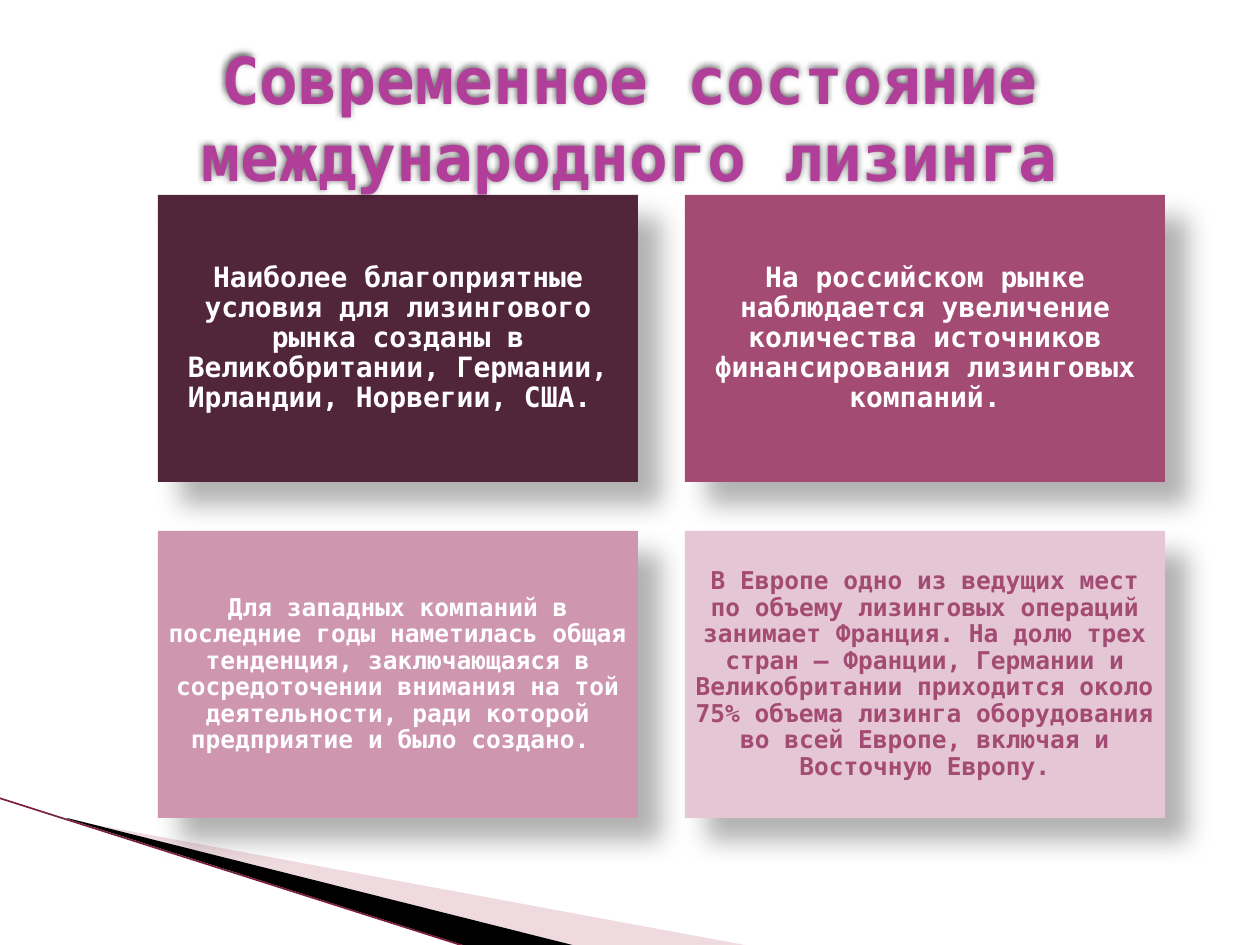
import pptx
import pptx.util
import pptx.dml.color
import pptx.enum.shapes
import pptx.enum.text
import pptx.oxml
import pptx.oxml.ns

SCALE = 914400 / 126
THEME = {
    "font": "DejaVu Sans Mono",
    "title": "B13F9A", "light": "FFFFFF", "accent": "A34B73",
    "cards": ["51253A", "A34B73", "CF96B0", "E5C6D5"],
    "pale": "D8A3AF", "black": "000000", "line": "7A1F3F",
    "title_size": 36.9, "large": 16, "small": 14,
}


def add_text(sp, text, size, color, inset):
    tf = sp.text_frame
    tf.word_wrap = True
    tf.vertical_anchor = pptx.enum.text.MSO_ANCHOR.MIDDLE
    tf.margin_left = tf.margin_right = tf.margin_top = tf.margin_bottom = int(inset * SCALE)
    p = tf.paragraphs[0]
    p.alignment = pptx.enum.text.PP_ALIGN.CENTER
    r = p.add_run()
    r.text = text
    r.font.name = THEME["font"]
    r.font.size = pptx.util.Pt(size)
    r.font.bold = True
    r.font.color.rgb = pptx.dml.color.RGBColor.from_string(color)
    return p


def add_shadow(sp, blur, dist, angle, alpha):
    sp.shadow.inherit = False
    effects = sp._element.spPr.find(pptx.oxml.ns.qn("a:effectLst"))
    effects.append(pptx.oxml.parse_xml(
        f'<a:outerShdw {pptx.oxml.ns.nsdecls("a")} blurRad="{pptx.util.Pt(blur)}" '
        f'dist="{pptx.util.Pt(dist)}" dir="{angle * 60000}" algn="ctr" rotWithShape="0">'
        f'<a:srgbClr val="000000"><a:alpha val="{alpha * 1000}"/></a:srgbClr></a:outerShdw>'))


prs = pptx.Presentation()
prs.slide_width = int(1260 * SCALE)
prs.slide_height = int(945 * SCALE)
s = prs.slides.add_slide(prs.slide_layouts[6])

wedges = [
    ([(69, 820), (750, 946), (575, 946), (69, 819)], THEME["pale"], 40),
    ([(67, 818), (576, 946), (469, 947), (68, 819)], THEME["black"], 100),
]
for points, color, alpha in wedges:
    builder = s.shapes.build_freeform(*points[0], scale=SCALE)
    builder.add_line_segments(points[1:], close=True)
    sp = builder.convert_to_shape()
    sp.shadow.inherit = False
    sp.line.fill.background()
    sp.fill.solid()
    sp.fill.fore_color.rgb = pptx.dml.color.RGBColor.from_string(color)
    if alpha < 100:
        clr = sp._element.spPr.find(".//" + pptx.oxml.ns.qn("a:srgbClr"))
        clr.append(pptx.oxml.parse_xml(
            f'<a:alpha {pptx.oxml.ns.nsdecls("a")} val="{alpha * 1000}"/>'))

edge = s.shapes.add_connector(
    pptx.enum.shapes.MSO_CONNECTOR.STRAIGHT,
    *[int(v * SCALE) for v in (-1, 798, 467, 947)])
edge.line.color.rgb = pptx.dml.color.RGBColor.from_string(THEME["line"])
edge.line.width = pptx.util.Pt(0.95)
edge._element.spPr.append(pptx.oxml.parse_xml(
    f'<a:effectLst {pptx.oxml.ns.nsdecls("a")}/>'))

cards = [
    ("Наиболее благоприятные условия для лизингового рынка созданы в Великобритании, "
     "Германии, Ирландии, Норвегии, США. ", THEME["large"], THEME["light"], 9),
    ("На российском рынке наблюдается увеличение количества источников финансирования "
     "лизинговых компаний.", THEME["large"], THEME["light"], 9),
    ("Для западных компаний в последние годы наметилась общая тенденция, заключающаяся "
     "в сосредоточении внимания на той деятельности, ради которой предприятие и было "
     "создано. ", THEME["small"], THEME["light"], 8),
    ("В Европе одно из ведущих мест по объему лизинговых операций занимает Франция. "
     "На долю трех стран — Франции, Германии и Великобритании приходится около 75% "
     "объема лизинга оборудования во всей Европе, включая и Восточную Европу.",
     THEME["small"], THEME["accent"], 8),
]
for i, (text, size, color, inset) in enumerate(cards):
    row, col = divmod(i, 2)
    box = (158 + 527 * col, 195 + 336 * row, 480, 287)
    sp = s.shapes.add_shape(
        pptx.enum.shapes.MSO_SHAPE.RECTANGLE, *[int(v * SCALE) for v in box])
    sp.fill.solid()
    sp.fill.fore_color.rgb = pptx.dml.color.RGBColor.from_string(THEME["cards"][i])
    sp.line.fill.background()
    add_shadow(sp, 15, 18, 45, 30)
    p = add_text(sp, text, size, color, inset)
    p.line_spacing = 0.9

title = s.shapes.add_textbox(*[int(v * SCALE) for v in (63, 38, 1134, 158)])
add_text(title, "Современное состояние международного лизинга",
         THEME["title_size"], THEME["title"], 6)
add_shadow(title, 4, 2, 225, 60)

prs.save("out.pptx")
